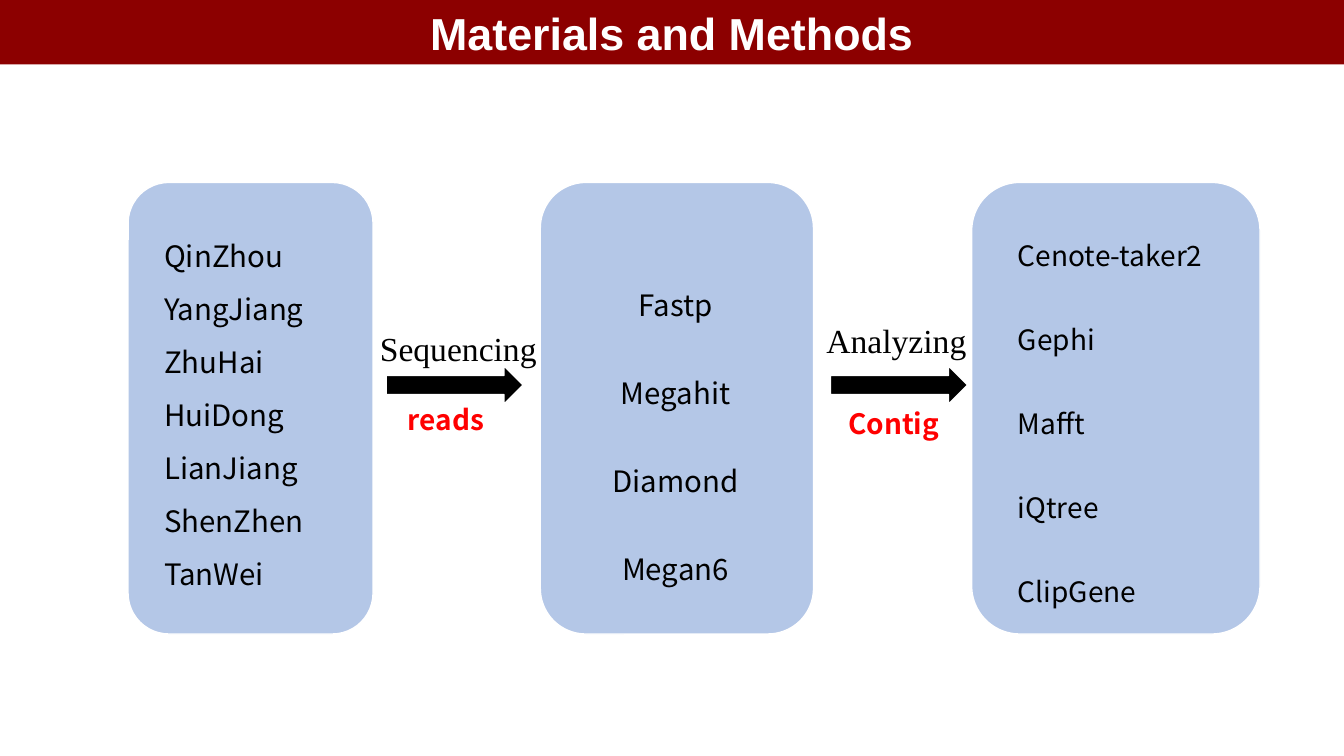
from pptx import Presentation
from pptx.dml.color import RGBColor
from pptx.enum.shapes import MSO_SHAPE
from pptx.enum.text import MSO_ANCHOR, MSO_AUTO_SIZE, PP_ALIGN
from pptx.util import Inches, Pt

presentation = Presentation()
presentation.slide_width = Inches(13.33)
presentation.slide_height = Inches(7.5)
slide = presentation.slides.add_slide(presentation.slide_layouts[6])

SANS, SERIF = "Noto Sans CJK SC", "Times New Roman"
CARD_TOP, CARD_HEIGHT = 24.13, 59.73
ARROW_TOP, ARROW_WIDTH, ARROW_HEIGHT = 48.4, 10.2, 5.07


def place(kind, left, top, width, height, fill=None, line=None):
    """Add a preset shape, or a text box if kind is None; lengths are percent of the slide."""
    box = [int(share * side / 100) for share, side in zip(
        (left, top, width, height),
        (presentation.slide_width, presentation.slide_height) * 2)]
    if kind is None:
        return slide.shapes.add_textbox(*box)
    shape = slide.shapes.add_shape(kind, *box)
    shape.shadow.inherit = False
    shape.fill.solid()
    shape.fill.fore_color.rgb = RGBColor.from_string(fill)
    if line:
        shape.line.color.rgb = RGBColor.from_string(line)
        shape.line.width = Pt(1)
    else:
        shape.line.fill.background()
    return shape


def write(shape, lines, color, frame_format, paragraph_format, font_format):
    """Fill a shape with one paragraph per line, all formatted alike."""
    frame = shape.text_frame
    frame.text = "\n".join(lines)
    for name, value in frame_format.items():
        setattr(frame, name, value)
    for paragraph in frame.paragraphs:
        for name, value in paragraph_format.items():
            setattr(paragraph, name, value)
        font = paragraph.runs[0].font
        for name, value in font_format.items():
            setattr(font, name, value)
        font.color.rgb = RGBColor.from_string(color)


growing = {"word_wrap": True, "auto_size": MSO_AUTO_SIZE.SHAPE_TO_FIT_TEXT}

# Title band
title = place(MSO_SHAPE.RECTANGLE, 0, 0, 100, 8.53, "8C0000")
write(title, ["Materials and Methods"], "FFFFFF",
      {"word_wrap": True, "vertical_anchor": MSO_ANCHOR.MIDDLE},
      {"alignment": PP_ALIGN.CENTER},
      {"name": "Arial", "size": Pt(32), "bold": True})

# Cards: left, width, text box, alignment, line spacing, size, lines
cards = [
    (9.53, 18.23, (11.48, 28.53, 17.03, 50), PP_ALIGN.LEFT, 1.5, 21,
     ["QinZhou", "YangJiang", "ZhuHai", "HuiDong", "LianJiang", "ShenZhen", "TanWei"]),
    (40.2, 20.33, (40.43, 30.27, 19.65, 46.4), PP_ALIGN.CENTER, 2.5, 21,
     ["Fastp", "Megahit", "Diamond", "Megan6"]),
    (72.3, 21.45, (75, 24.27, 18.75, 55.47), PP_ALIGN.LEFT, 2.5, 20,
     ["Cenote-taker2", "Gephi", "Mafft", "iQtree", "ClipGene"]),
]
for left, width, text_box, alignment, spacing, size, lines in cards:
    place(MSO_SHAPE.ROUNDED_RECTANGLE, left, CARD_TOP, width, CARD_HEIGHT,
          "B4C7E7", "FFFFFF")
    write(place(None, *text_box), lines, "000000", growing,
          {"alignment": alignment, "line_spacing": spacing},
          {"name": SANS, "size": Pt(size)})

# Steps between cards: arrow left, action above, product below
steps = [
    (28.73, "Sequencing", (27.53, 42.67, 13.28, 6.67), "reads", (27.23, 50.4)),
    (61.8, "Analyzing", (60.75, 41.6, 12.9, 6.67), "Contig", (60.53, 50.93)),
]
for arrow_left, action, action_box, product, product_corner in steps:
    place(MSO_SHAPE.RIGHT_ARROW, arrow_left, ARROW_TOP, ARROW_WIDTH, ARROW_HEIGHT,
          "000000", "FFFFFF")
    write(place(None, *action_box), [action], "000000", growing,
          {"alignment": PP_ALIGN.LEFT}, {"name": SERIF, "size": Pt(24)})
    write(place(None, *product_corner, 11.93, 7.33), [product], "FF0000", growing,
          {"alignment": PP_ALIGN.CENTER, "line_spacing": 1.5},
          {"name": SANS, "size": Pt(20), "bold": True})

presentation.save("out.pptx")
